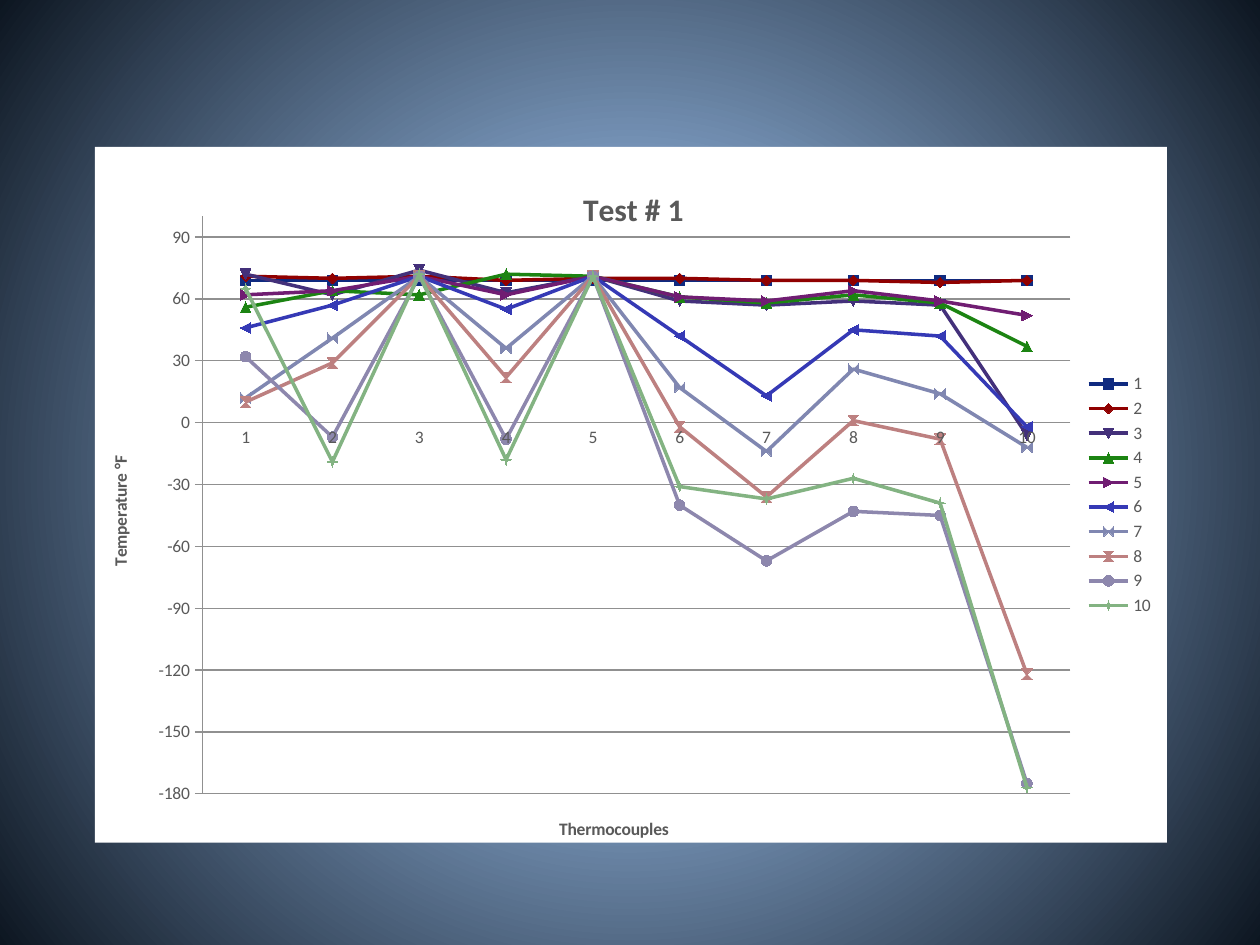
from lxml import etree
from pptx import Presentation
from pptx.chart.data import CategoryChartData
from pptx.dml.color import RGBColor
from pptx.enum.chart import XL_CHART_TYPE, XL_LEGEND_POSITION, XL_TICK_MARK
from pptx.oxml import parse_xml
from pptx.oxml.ns import nsdecls, qn
from pptx.util import Emu, Pt

PX = 914400 / 126
FONT = "Calibri"
TEXT = RGBColor(0x59, 0x59, 0x59)
GRID = RGBColor(0x90, 0x90, 0x90)
WHITE = RGBColor(0xFF, 0xFF, 0xFF)
BACKDROP = [
    (0, RGBColor(0xBA, 0xCD, 0xE4)),
    (30, RGBColor(0x88, 0xA9, 0xD1)),
    (100, RGBColor(0x0D, 0x16, 0x21)),
]
TESTS = [
    (RGBColor(0x0F, 0x2A, 0x80), (69, 69, 69, 69, 69, 69, 69, 69, 69, 69)),
    (RGBColor(0x90, 0x00, 0x00), (71, 70, 71, 69, 70, 70, 69, 69, 68, 69)),
    (RGBColor(0x43, 0x30, 0x7A), (72, 62, 74, 63, 71, 59, 57, 59, 57, -6)),
    (RGBColor(0x1C, 0x84, 0x12), (56, 64, 62, 72, 71, 61, 58, 62, 58, 37)),
    (RGBColor(0x70, 0x1D, 0x72), (62, 64, 71, 62, 71, 61, 59, 64, 59, 52)),
    (RGBColor(0x35, 0x39, 0xB5), (46, 57, 71, 55, 71, 42, 13, 45, 42, -2)),
    (RGBColor(0x80, 0x87, 0xB1), (12, 41, 71, 36, 71, 17, -14, 26, 14, -12)),
    (RGBColor(0xBD, 0x80, 0x80), (10, 29, 71, 22, 71, -2, -36, 1, -8, -122)),
    (RGBColor(0x8D, 0x87, 0xAD), (32, -7, 71, -8, 71, -40, -67, -43, -45, -175)),
    (RGBColor(0x83, 0xB3, 0x82), (65, -19, 72, -18, 71, -31, -37, -27, -39, -177)),
]


def px(n):
    return Emu(round(n * PX))


def set_radial_background(s):
    stops = "".join(
        f'<a:gs pos="{pos * 1000}"><a:srgbClr val="{color}"/></a:gs>'
        for pos, color in BACKDROP
    )
    s._element.cSld.insert(0, parse_xml(
        f'<p:bg {nsdecls("p", "a")}><p:bgPr><a:gradFill rotWithShape="1">'
        f'<a:gsLst>{stops}</a:gsLst><a:path path="circle">'
        '<a:fillToRect l="50000" t="50000" r="50000" b="50000"/></a:path>'
        '</a:gradFill><a:effectLst/></p:bgPr></p:bg>'
    ))


def set_layout(parent, index, **values):
    """Give a chart part a manual layout, as fractions of the chart."""
    for old in parent.findall(qn("c:layout")):
        parent.remove(old)
    layout = etree.Element(qn("c:layout"))
    manual = etree.SubElement(layout, qn("c:manualLayout"))
    for name, value in values.items():
        etree.SubElement(manual, qn(f"c:{name}")).set("val", str(value))
    parent.insert(index, layout)


def set_font(font, size=10, bold=False, color=TEXT):
    font.name = FONT
    font.size = Pt(size)
    font.bold = bold
    font.color.rgb = color


def add_title(title, text, x, y, **font):
    r = title.text_frame.paragraphs[0].add_run()
    r.text = text
    set_font(r.font, bold=True, **font)
    set_layout(title._element, 1, xMode="edge", yMode="edge", x=x, y=y)


def set_line(line, color, width):
    line.color.rgb = color
    line.width = Pt(width)


def style_axes(chart):
    cat, val = chart.category_axis, chart.value_axis
    for axis in (cat, val):
        axis.minor_tick_mark = XL_TICK_MARK.NONE
        set_line(axis.format.line, GRID, 0.75)
        set_font(axis.tick_labels.font)
    cat.major_tick_mark = XL_TICK_MARK.NONE
    val.major_tick_mark = XL_TICK_MARK.CROSS
    val.minimum_scale, val.maximum_scale, val.major_unit = -180, 100, 30
    val.has_major_gridlines = True
    set_line(val.major_gridlines.format.line, GRID, 0.75)
    add_title(cat.axis_title, "Thermocouples", 0.43, 0.96)
    add_title(val.axis_title, "Temperature °F", 0.01, 0.44)


def style_series(chart):
    for series, (color, _) in zip(chart.plots[0].series, TESTS):
        series.smooth = False
        set_line(series.format.line, color, 2)
        series.marker.size = 6
        series.marker.format.fill.solid()
        series.marker.format.fill.fore_color.rgb = color
        set_line(series.marker.format.line, color, 0.75)


def fill_chart(chart, color):
    chart._chartSpace.find(qn("c:txPr")).addprevious(parse_xml(
        f'<c:spPr {nsdecls("c", "a")}><a:solidFill><a:srgbClr val="{color}"/>'
        '</a:solidFill><a:ln><a:noFill/></a:ln></c:spPr>'
    ))


def add_temperature_chart(s, x, y, w, h):
    data = CategoryChartData()
    data.categories = [str(n) for n in range(1, 11)]
    for n, (_, values) in enumerate(TESTS, 1):
        data.add_series(str(n), values)
    chart = s.shapes.add_chart(
        XL_CHART_TYPE.LINE_MARKERS, px(x), px(y), px(w), px(h), data
    ).chart
    set_font(chart.font)
    fill_chart(chart, WHITE)
    chart.plots[0].vary_by_categories = False
    add_title(chart.chart_title, "Test # 1", 0.45, 0.05, size=18)
    chart.has_legend = True
    chart.legend.position = XL_LEGEND_POSITION.RIGHT
    chart.legend.include_in_layout = False
    set_font(chart.legend.font)
    style_axes(chart)
    style_series(chart)
    set_layout(
        chart._chartSpace.chart.plotArea, 0, layoutTarget="inner",
        xMode="edge", yMode="edge", x=0.1, y=0.1, w=0.81, h=0.83,
    )


def main():
    prs = Presentation()
    prs.slide_width, prs.slide_height = px(1260), px(945)
    s = prs.slides.add_slide(prs.slide_layouts[6])
    set_radial_background(s)
    add_temperature_chart(s, 95, 147, 1072, 698)
    prs.save("out.pptx")


if __name__ == "__main__":
    main()
